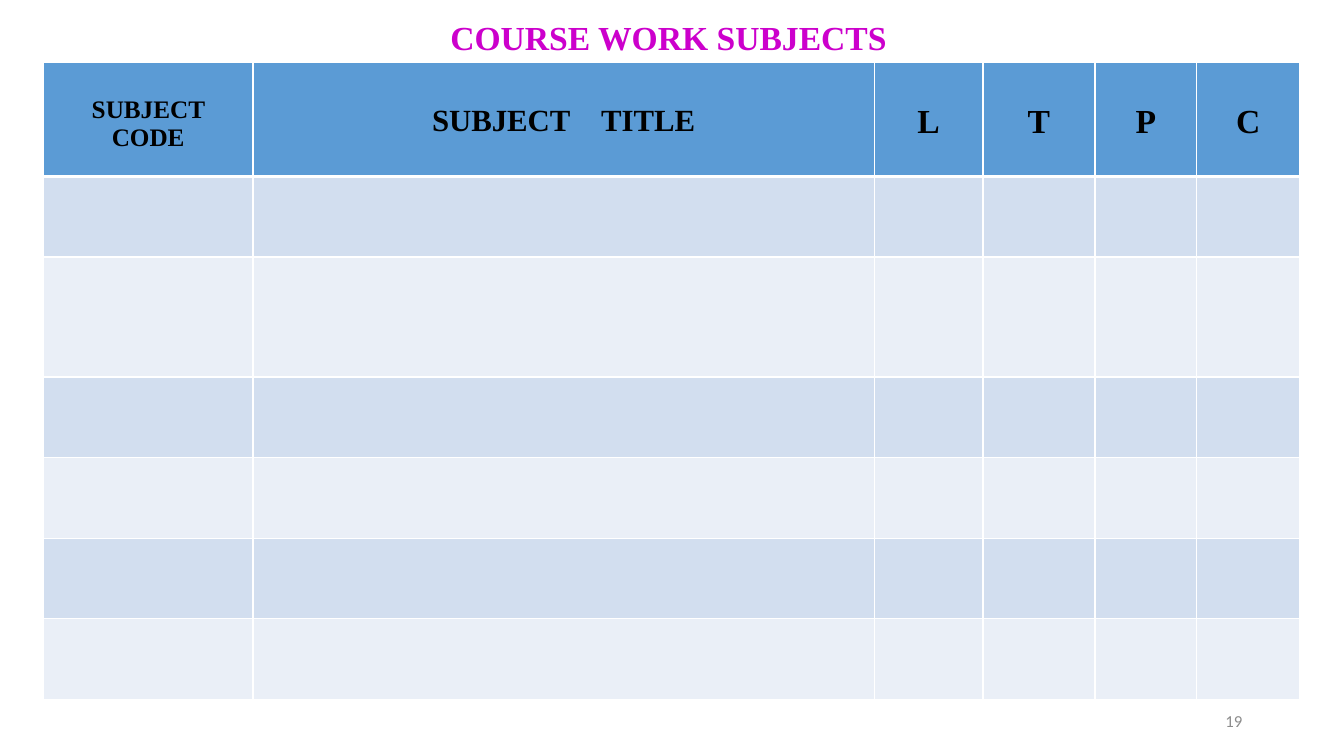
from lxml.etree import SubElement
from pptx import Presentation
from pptx.dml.color import RGBColor
from pptx.enum.text import MSO_ANCHOR, PP_ALIGN
from pptx.oxml.ns import qn
from pptx.util import Inches, Pt

MAGENTA = RGBColor(0xCC, 0x00, 0xCC)
BLACK = RGBColor(0x00, 0x00, 0x00)
GRAY = RGBColor(0x8C, 0x8C, 0x8C)
WHITE = RGBColor(0xFF, 0xFF, 0xFF)
HEADER_BLUE = RGBColor(0x5B, 0x9B, 0xD5)
BANDS = (RGBColor(0xEA, 0xEF, 0xF7), RGBColor(0xD2, 0xDE, 0xEF))

SERIF = "Times New Roman"
HEADERS = (
    ("SUBJECT CODE", 18, 0.33, 0),
    ("SUBJECT TITLE", 22, 0.41, 16.5),
    ("L", 24, 0.41, 0),
    ("T", 24, 0.41, 0),
    ("P", 24, 0.41, 0),
    ("C", 24, 0.41, 0),
)
COLUMN_WIDTHS = (2.08, 6.16, 1.08, 1.11, 1.01, 1.02)
ROW_HEIGHTS = (1.13, 0.8, 1.19, 0.8, 0.8, 0.8, 0.8)


def write(frame, text, *, size, color, font=SERIF, bold=False,
          align=PP_ALIGN.CENTER, word_gap=0):
    """Write one paragraph, widening its first space by word_gap points."""
    paragraph = frame.paragraphs[0]
    paragraph.alignment = align
    for piece in text.partition(" ") if word_gap else (text,):
        run = paragraph.add_run()
        run.text = piece
        run.font.name = font
        run.font.size = Pt(size)
        run.font.bold = bold
        run.font.color.rgb = color
        if piece == " ":
            run._r.get_or_add_rPr().set("spc", str(round(word_gap * 100)))


def add_label(slide, text, left, top, width, height, *, wrap=True,
              anchor=MSO_ANCHOR.TOP, **text_format):
    """Place a line of text in the given box."""
    frame = slide.shapes.add_textbox(
        Inches(left), Inches(top), Inches(width), Inches(height)).text_frame
    frame.word_wrap = wrap
    frame.vertical_anchor = anchor
    write(frame, text, **text_format)


def style_cell(cell, fill, top_width, bottom_width):
    """Give a cell white borders and a solid fill."""
    properties = cell._tc.get_or_add_tcPr()
    widths = {"lnL": 1, "lnR": 1, "lnT": top_width, "lnB": bottom_width}
    for side, width in widths.items():
        border = SubElement(properties, qn(f"a:{side}"), w=str(Pt(width)))
        solid = SubElement(border, qn("a:solidFill"))
        SubElement(solid, qn("a:srgbClr"), val=str(WHITE))
    cell.fill.solid()
    cell.fill.fore_color.rgb = fill


def add_subject_table(slide, left, top, width, height):
    """Build the banded subject table with its header row."""
    subjects = slide.shapes.add_table(
        len(ROW_HEIGHTS), len(COLUMN_WIDTHS),
        Inches(left), Inches(top), Inches(width), Inches(height)).table
    for column, column_width in zip(subjects.columns, COLUMN_WIDTHS):
        column.width = Inches(column_width)
    for index, row in enumerate(subjects.rows):
        row.height = Inches(ROW_HEIGHTS[index])
        fill = BANDS[index % 2] if index else HEADER_BLUE
        for cell in row.cells:
            style_cell(cell, fill, 3 if index == 1 else 1, 1 if index else 3)
    for cell, (heading, size, inset, gap) in zip(subjects.rows[0].cells, HEADERS):
        cell.margin_top = Inches(inset)
        write(cell.text_frame, heading, size=size, color=BLACK, bold=True,
              word_gap=gap)


def add_course_work_slide(deck):
    """Add the course work slide: table, title and page number."""
    slide = deck.slides.add_slide(deck.slide_layouts[6])
    add_subject_table(slide, 0.43, 0.62, sum(COLUMN_WIDTHS), sum(ROW_HEIGHTS))
    add_label(slide, "COURSE WORK SUBJECTS", 4.34, 0.12, 4.58, 0.5,
              wrap=False, size=24, color=MAGENTA, bold=True)
    add_label(slide, "19", 9.42, 6.95, 3, 0.4, anchor=MSO_ANCHOR.MIDDLE,
              size=12, color=GRAY, font="Calibri", align=PP_ALIGN.RIGHT)


def main():
    """Build and save the deck."""
    deck = Presentation()
    deck.slide_width = Inches(13.33)
    deck.slide_height = Inches(7.5)
    add_course_work_slide(deck)
    deck.save("out.pptx")


if __name__ == "__main__":
    main()
